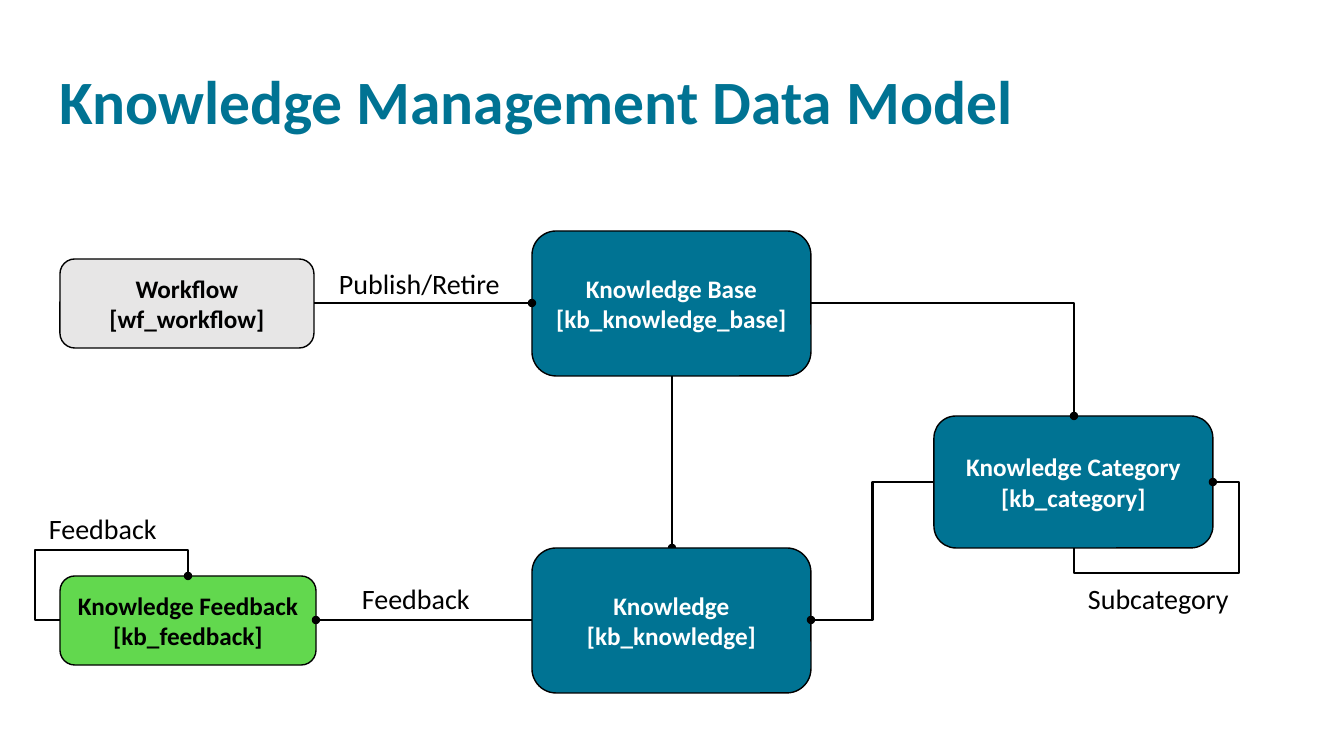
import pptx
import pptx.dml.color
import pptx.enum.shapes
import pptx.enum.text
import pptx.oxml
import pptx.oxml.ns
import pptx.util

RGBColor = pptx.dml.color.RGBColor
TEAL = RGBColor(0x00, 0x73, 0x93)
GREEN = RGBColor(0x62, 0xD8, 0x4E)
GREY = RGBColor(0xE7, 0xE6, 0xE6)
BLACK = RGBColor(0, 0, 0)
WHITE = RGBColor(0xFF, 0xFF, 0xFF)

FONT = "Calibri"
SCALE = 914400 / 100.8  # EMU in one px
ALIGN = pptx.enum.text.PP_ALIGN
ANCHOR = pptx.enum.text.MSO_ANCHOR
WIRE = pptx.enum.shapes.MSO_CONNECTOR


def px(*vals):
    return [pptx.util.Emu(round(val * SCALE)) for val in vals]


def style(frame, size, color, bold=False, align=ALIGN.LEFT):
    for para in frame.paragraphs:
        para.alignment = align
        for run in para.runs:
            run.font.name = FONT
            run.font.size = pptx.util.Pt(size)
            run.font.bold = bold
            run.font.color.rgb = color


def title(slide, text, *area):
    shape = slide.shapes.title
    shape.left, shape.top, shape.width, shape.height = px(*area)
    frame = shape.text_frame
    frame.text = text
    frame.vertical_anchor = ANCHOR.TOP
    frame.auto_size = pptx.enum.text.MSO_AUTO_SIZE.NONE
    frame.paragraphs[0].line_spacing = 0.9
    style(frame, 44, TEAL, True)


def table(slide, text, fill, color, *area):
    """Add a rounded box that stands for one database table."""
    kind = pptx.enum.shapes.MSO_SHAPE.ROUNDED_RECTANGLE
    shape = slide.shapes.add_shape(kind, *px(*area))
    shape.shadow.inherit = False
    shape.fill.solid()
    shape.fill.fore_color.rgb = fill
    shape.line.color.rgb = BLACK
    shape.line.width = pptx.util.Pt(1)
    frame = shape.text_frame
    frame.text = text
    frame.word_wrap = True
    frame.vertical_anchor = ANCHOR.MIDDLE
    style(frame, 18, color, True, ALIGN.CENTER)


def label(slide, text, *area):
    frame = slide.shapes.add_textbox(*px(*area)).text_frame
    frame.text = text
    frame.word_wrap = True
    style(frame, 20, BLACK)


def dot(shape):
    """Draw the line in black, with a round dot at its start."""
    shape.line.color.rgb = BLACK
    shape.line.width = pptx.util.Pt(2)
    head = pptx.oxml.parse_xml(
        "<a:headEnd %s type='oval'/>" % pptx.oxml.ns.nsdecls("a"))
    shape.line._get_or_add_ln().append(head)


def link(slide, kind, *ends):
    wire = slide.shapes.add_connector(kind, *px(*ends))
    dot(wire)
    wire._element.spPr.append(pptx.oxml.parse_xml(
        "<a:effectLst %s/>" % pptx.oxml.ns.nsdecls("a")))


def route(slide, start, *turns):
    """Add a line that bends at each given point."""
    pen = slide.shapes.build_freeform(*start, scale=SCALE)
    pen.add_line_segments(turns, close=False)
    shape = pen.convert_to_shape()
    shape.shadow.inherit = False
    shape.fill.background()
    dot(shape)


def main():
    deck = pptx.Presentation()
    deck.slide_width, deck.slide_height = px(1344, 756)
    slide = deck.slides.add_slide(deck.slide_layouts[5])
    title(slide, "Knowledge Management Data Model", 49, 66, 1067, 95)

    # The dot of this line is half hidden by the Knowledge box
    link(slide, WIRE.STRAIGHT, 672, 548, 672, 376)

    # Tables
    for text, fill, color, area in (
        ("Knowledge Base\n[kb_knowledge_base]", TEAL, WHITE, (532, 231, 279, 145)),
        ("Knowledge Category\n[kb_category]", TEAL, WHITE, (934, 416, 279, 132)),
        ("Knowledge\n[kb_knowledge]", TEAL, WHITE, (532, 548, 279, 145)),
        ("Workflow\n[wf_workflow]", GREY, BLACK, (60, 259, 254, 89)),
        ("Knowledge Feedback\n[kb_feedback]", GREEN, BLACK, (60, 576, 256, 89)),
    ):
        table(slide, text, fill, color, *area)

    # Links between tables
    link(slide, WIRE.STRAIGHT, 532, 303, 314, 303)
    link(slide, WIRE.STRAIGHT, 316, 620, 532, 620)
    link(slide, WIRE.ELBOW, 811, 620, 934, 482)
    route(slide, (1074, 416), (1074, 303), (811, 303))

    # Links from a table to itself
    route(slide, (1213, 482), (1239, 482), (1239, 573), (1074, 573), (1074, 548))
    route(slide, (188, 576), (188, 550), (35, 550), (35, 620), (60, 620))

    # Link names
    label(slide, "Publish/Retire", 329, 262, 184, 44)
    label(slide, "Subcategory", 1078, 577, 171, 44)
    label(slide, "Feedback", 352, 577, 145, 44)
    label(slide, "Feedback", 39, 507, 150, 44)

    deck.save("out.pptx")


if __name__ == "__main__":
    main()
